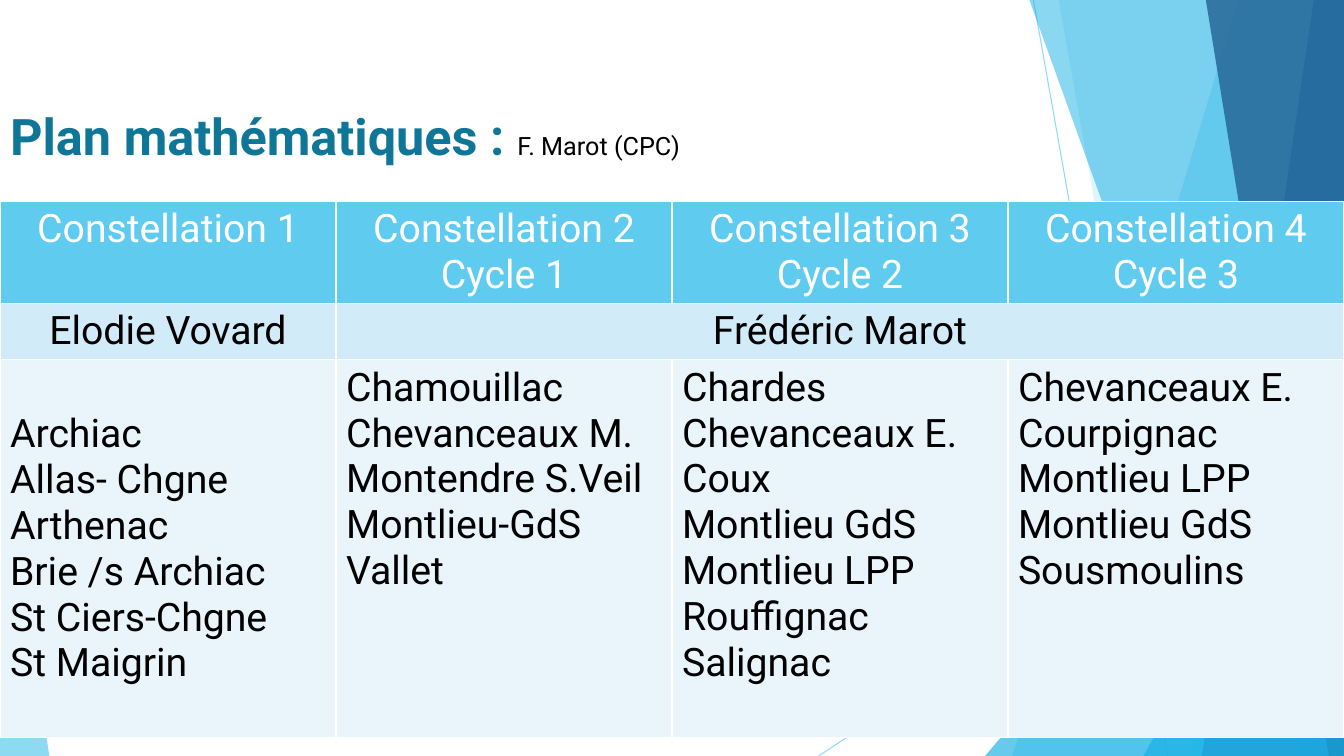
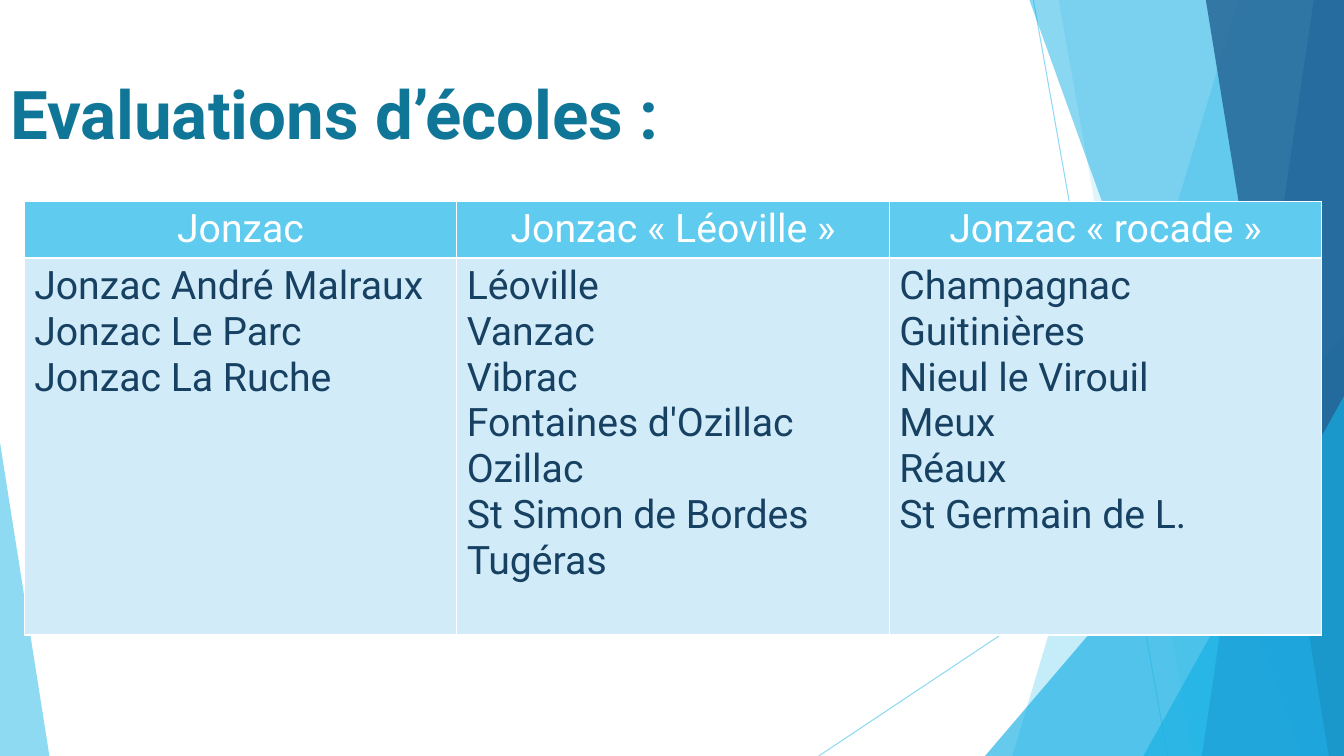
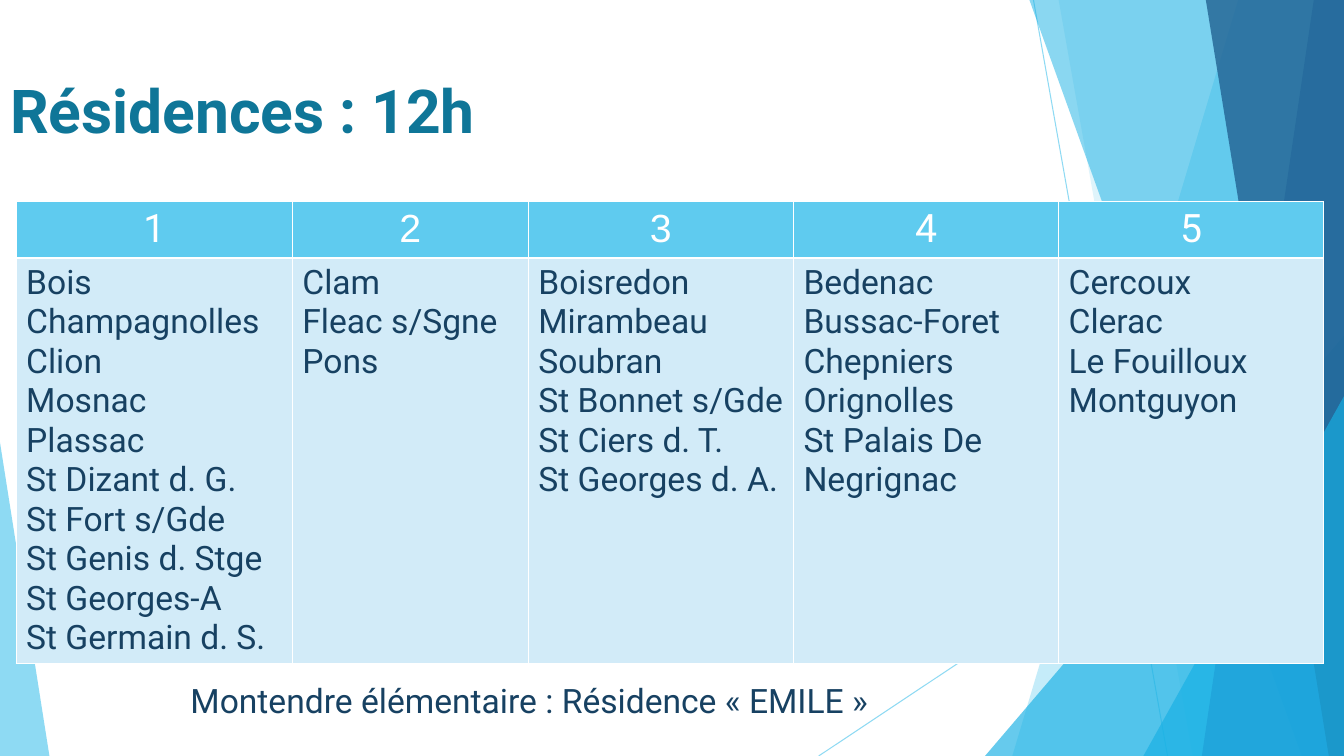
"""Build three slides of school lists on a shared layout of blue bands."""
import pptx
import pptx.util
import pptx.dml.color
import pptx.enum.shapes
import pptx.enum.text
import pptx.oxml
import pptx.oxml.ns
from lxml import etree

Inches = pptx.util.Inches
Pt = pptx.util.Pt
qn = pptx.oxml.ns.qn
Align = pptx.enum.text.PP_ALIGN
Anchor = pptx.enum.text.MSO_ANCHOR

WIDE, HIGH = 13.33, 7.5
FACE = "Roboto"
HUES = {
    "sky": "5FCBEF", "cyan": "17B0E4", "blue": "2E83C3", "deep": "226292",
    "title": "0F7698", "navy": "174162", "black": "000000",
    "white": "FFFFFF", "pale": "D2EBF8", "faint": "EAF5FB",
}


def tint(name):
    return pptx.dml.color.RGBColor.from_string(HUES[name])


def style(font, size, hue, bold=False, face=FACE):
    font.name, font.size, font.bold = face, Pt(size), bold
    font.color.rgb = tint(hue)


def fade(shape, alpha):
    color = shape.element.spPr.find(".//" + qn("a:srgbClr"))
    etree.SubElement(color, qn("a:alpha")).set("val", str(alpha * 1000))


def paint(shape, hue, alpha):
    shape.shadow.inherit = False
    shape.fill.solid()
    shape.fill.fore_color.rgb = tint(hue)
    shape.line.fill.background()
    fade(shape, alpha)


def ray(shapes, x1, y1, x2, y2):
    line = shapes.add_connector(
        pptx.enum.shapes.MSO_CONNECTOR.STRAIGHT,
        Inches(x1), Inches(y1), Inches(x2), Inches(y2))
    line.line.color.rgb = tint("sky")
    line.line.width = Pt(0.75)
    fade(line, 70)
    etree.SubElement(line.element.spPr, qn("a:effectLst"))


def band(shapes, top, foot, hue, alpha):
    spots = [(WIDE, 0), (WIDE, HIGH), (foot, HIGH)]
    form = shapes.build_freeform(Inches(top), 0)
    form.add_line_segments([(Inches(x), Inches(y)) for x, y in spots], close=True)
    paint(form.convert_to_shape(), hue, alpha)


def wedge(shapes, left, top, width, tip, hue, alpha):
    shape = shapes.add_shape(
        pptx.enum.shapes.MSO_SHAPE.ISOSCELES_TRIANGLE,
        Inches(left), Inches(top), Inches(width), Inches(HIGH - top))
    shape.adjustments[0] = tip
    paint(shape, hue, alpha)


def decor(slide):
    shapes = slide.shapes
    old = list(shapes.element)
    ray(shapes, 10.25, 0, 11.58, HIGH)
    ray(shapes, WIDE, 4.03, 8.12, HIGH)
    band(shapes, 12.28, 10.04, "sky", 36)
    band(shapes, 10.5, 11.83, "sky", 20)
    wedge(shapes, 9.77, 3.33, 3.56, 1, "cyan", 66)
    band(shapes, 10.21, 12.91, "cyan", 50)
    band(shapes, 13.03, 11.92, "blue", 70)
    band(shapes, 11.96, 13.18, "deep", 80)
    wedge(shapes, 11.34, 3.93, 1.99, 1, "cyan", 66)
    wedge(shapes, 0, 4.39, 0.49, 0, "sky", 70)
    for part in list(shapes.element):
        if part not in old:
            slide.slide_layout.shapes.element.append(part)


def head(slide, top, height, text, size, note=None):
    title = slide.shapes.title
    title.left, title.top = Inches(0), Inches(top)
    title.width, title.height = Inches(9.4), Inches(height)
    frame = title.text_frame
    frame.auto_size = pptx.enum.text.MSO_AUTO_SIZE.NONE
    frame.vertical_anchor = Anchor.TOP
    para = frame.paragraphs[0]
    para.alignment = Align.LEFT
    run = para.add_run()
    run.text = text
    if note:
        style(run.font, size, "title", True)
        extra = para.add_run()
        extra.text = note
        style(extra.font, 18, "black")
    else:
        style(para.font, size, "title", True)


def edge(cell):
    props = cell._tc.get_or_add_tcPr()
    for side in ("lnL", "lnR", "lnT", "lnB"):
        line = etree.SubElement(props, qn("a:" + side), w=str(Pt(0.96)))
        fill = etree.SubElement(line, qn("a:solidFill"))
        etree.SubElement(fill, qn("a:srgbClr"), val=HUES["white"])


def fill(cell, text, back, size, hue, align=Align.LEFT, face=FACE):
    edge(cell)
    cell.fill.solid()
    cell.fill.fore_color.rgb = tint(back)
    cell.text = text
    for para in cell.text_frame.paragraphs:
        para.alignment = align
        style(para.font, size, hue, face=face)


def grid(slide, left, cols, rows):
    frame = slide.shapes.add_table(
        len(rows), len(cols), Inches(left), Inches(2),
        Inches(sum(cols)), Inches(sum(rows)))
    table = frame.table
    table.horz_banding = False
    for col, width in zip(table.columns, cols):
        col.width = Inches(width)
    for row, height in zip(table.rows, rows):
        row.height = Inches(height)
    return table


def maths(slide):
    head(slide, 0.99, 1.44, "Plan mathématiques : ", 36, "F. Marot (CPC)")
    table = grid(slide, 0, [WIDE / 4] * 4, [1.01, 0.56, 3.75])
    tops = ["Constellation 1", "Constellation 2\nCycle 1",
            "Constellation 3\nCycle 2", "Constellation 4\nCycle 3"]
    leads = ["Elodie Vovard", "Frédéric Marot", "", ""]
    lists = [
        "Archiac\nAllas- Chgne\nArthenac\nBrie /s Archiac\nSt Ciers-Chgne\nSt Maigrin",
        "Chamouillac\nChevanceaux M.\nMontendre S.Veil\nMontlieu-GdS\nVallet",
        "Chardes\nChevanceaux E.\nCoux\nMontlieu GdS\nMontlieu LPP\nRouffignac\nSalignac",
        "Chevanceaux E.\nCourpignac\nMontlieu LPP\nMontlieu GdS\nSousmoulins",
    ]
    for col, (top, lead, names) in enumerate(zip(tops, leads, lists)):
        fill(table.cell(0, col), top, "sky", 28, "white", Align.CENTER)
        fill(table.cell(1, col), lead, "pale", 28, "black", Align.CENTER)
        fill(table.cell(2, col), names, "faint", 28, "black")
    table.cell(1, 1).merge(table.cell(1, 3))
    table.cell(2, 0).vertical_anchor = Anchor.MIDDLE


def groups(slide, left, cols, height, size, lists, faces):
    table = grid(slide, left, cols, [0.56, height])
    for col, ((top, names), face) in enumerate(zip(lists.items(), faces)):
        fill(table.cell(0, col), top, "sky", 28, "white", Align.CENTER, face)
        fill(table.cell(1, col), names, "pale", size, "navy")


def checks(slide):
    head(slide, 0.67, 1.44, "Evaluations d’écoles :", 48)
    groups(slide, 0.24, [4.29] * 3, 3.74, 28, {
        "Jonzac": "Jonzac André Malraux\nJonzac Le Parc\nJonzac La Ruche",
        "Jonzac « Léoville »": "Léoville\nVanzac\nVibrac\nFontaines d'Ozillac\n"
                               "Ozillac\nSt Simon de Bordes\nTugéras",
        "Jonzac « rocade »": "Champagnac\nGuitinières\nNieul le Virouil\n"
                             "Meux\nRéaux\nSt Germain de L.",
    }, [FACE] * 3)


def stays(slide):
    head(slide, 0.67, 0.72, "Résidences : 12h", 43.2)
    groups(slide, 0.16, [2.74, 2.34] + [2.63] * 3, 4.02, 24, {
        "1": "Bois\nChampagnolles\nClion\nMosnac\nPlassac\nSt Dizant d. G.\n"
             "St Fort s/Gde\nSt Genis d. Stge\nSt Georges-A\nSt Germain d. S.",
        "2": "Clam\nFleac s/Sgne\nPons",
        "3": "Boisredon\nMirambeau\nSoubran\nSt Bonnet s/Gde\n"
             "St Ciers d. T.\nSt Georges d. A.",
        "4": "Bedenac\nBussac-Foret\nChepniers\nOrignolles\nSt Palais De Negrignac",
        "5": "Cercoux\nClerac\nLe Fouilloux\nMontguyon",
    }, [FACE, "Arial", "Arial", FACE, FACE])
    box = slide.shapes.add_textbox(Inches(1.79), Inches(6.7), Inches(7.12), Inches(0.5))
    frame = box.text_frame
    frame.word_wrap = False
    frame.text = "Montendre élémentaire : Résidence « EMILE »"
    style(frame.paragraphs[0].font, 24, "navy")


def main():
    deck = pptx.Presentation()
    deck.slide_width, deck.slide_height = Inches(WIDE), Inches(HIGH)
    layout = deck.slide_layouts[5]
    slides = [deck.slides.add_slide(layout) for _ in range(3)]
    decor(slides[0])
    for build, slide in zip((maths, checks, stays), slides):
        build(slide)
    deck.save("out.pptx")


if __name__ == "__main__":
    main()
